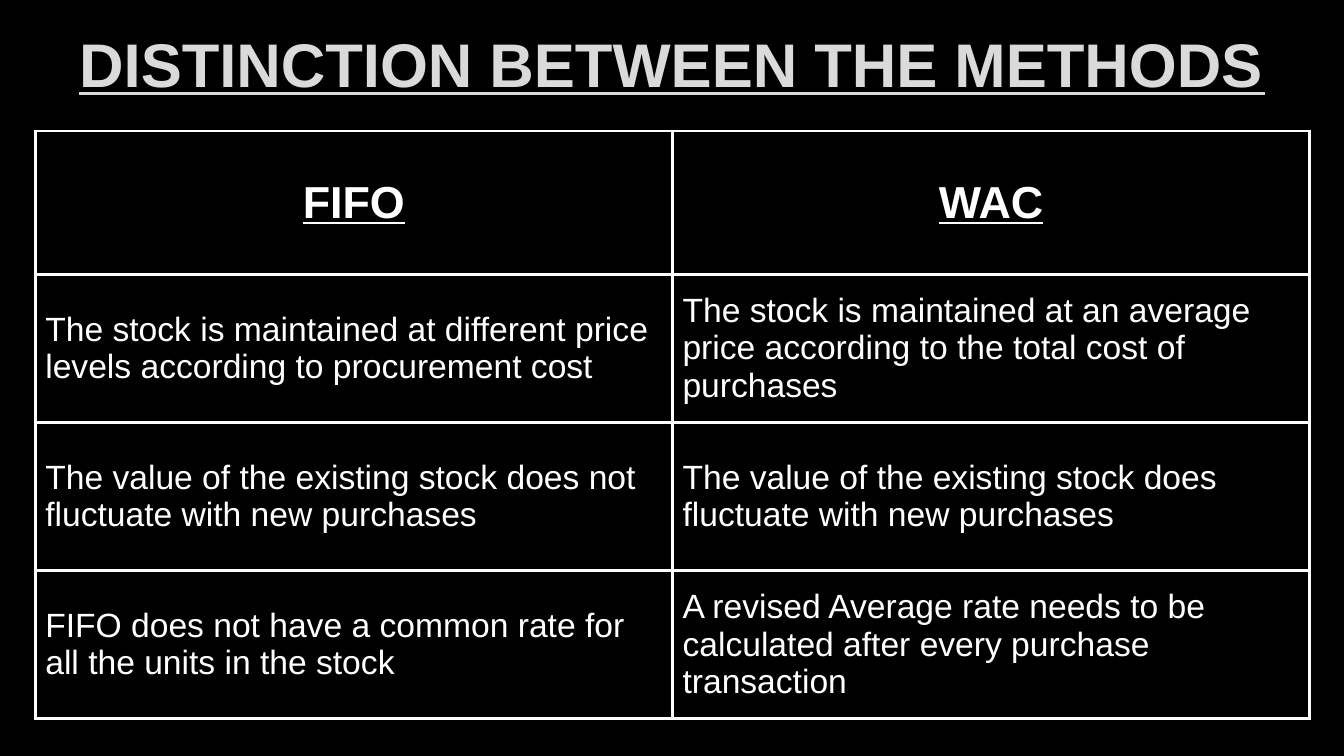
from lxml.etree import SubElement
from pptx import Presentation
from pptx.dml.color import RGBColor
from pptx.enum.text import MSO_ANCHOR, PP_ALIGN
from pptx.oxml.ns import qn
from pptx.util import Inches, Pt

COLORS = {"background": "000000", "title": "DADADA", "outline": "404040", "table": "FFFFFF"}
TITLE_FORMAT = {"name": "Arial", "size": Pt(44), "bold": True, "underline": True}
HEADER_FORMAT = {"name": "Arial", "size": Pt(32), "bold": True, "underline": True}
BODY_FORMAT = {"name": "Arial", "size": Pt(24), "bold": False, "underline": False}

METHOD_ROWS = [
    ("FIFO", "WAC"),
    ("The stock is maintained at different price levels according to procurement cost",
     "The stock is maintained at an average price according to the total cost of purchases"),
    ("The value of the existing stock does not fluctuate with new purchases",
     "The value of the existing stock does fluctuate with new purchases"),
    ("FIFO does not have a common rate for all the units in the stock",
     "A revised Average rate needs to be calculated after every purchase transaction"),
]
HEADER_HEIGHT = 1.42


def write_text(paragraph, text, alignment, color, font_format):
    paragraph.alignment = alignment
    run = paragraph.add_run()
    run.text = text
    for attribute, value in font_format.items():
        setattr(run.font, attribute, value)
    run.font.color.rgb = RGBColor.from_string(COLORS[color])
    return run


def add_solid_line(properties, tag, width, color, opacity=None):
    line = SubElement(properties, qn(tag), w=str(Pt(width)))
    fill = SubElement(line, qn("a:solidFill"))
    shade = SubElement(fill, qn("a:srgbClr"), val=COLORS[color])
    if opacity is not None:
        SubElement(shade, qn("a:alpha"), val=str(opacity * 1000))
    SubElement(line, qn("a:prstDash"), val="solid")
    return line


def add_title(slide, left, top, width, height):
    title = slide.shapes.add_textbox(Inches(left), Inches(top), Inches(width), Inches(height))
    title.text_frame.word_wrap = True
    title.text_frame.vertical_anchor = MSO_ANCHOR.MIDDLE
    run = write_text(title.text_frame.paragraphs[0], "DISTINCTION BETWEEN THE METHODS",
                     PP_ALIGN.CENTER, "title", TITLE_FORMAT)
    properties = run.font._element
    properties.insert(0, add_solid_line(properties, "a:ln", 0.75, "outline", 10))


def style_cell(cell):
    cell.vertical_anchor = MSO_ANCHOR.MIDDLE
    properties = cell._tc.get_or_add_tcPr()
    for side in ("L", "R", "T", "B"):
        add_solid_line(properties, f"a:ln{side}", 2.25, "table")
    cell.fill.background()


def add_methods_table(slide, left, top, width, height):
    column_count = len(METHOD_ROWS[0])
    table = slide.shapes.add_table(len(METHOD_ROWS), column_count, Inches(left), Inches(top),
                                   Inches(width), Inches(height)).table
    table.first_row = False
    table.horz_banding = False
    for column in table.columns:
        column.width = Inches(width / column_count)
    body_height = (height - HEADER_HEIGHT) / (len(METHOD_ROWS) - 1)
    for row_index, texts in enumerate(METHOD_ROWS):
        is_header = row_index == 0
        table.rows[row_index].height = Inches(HEADER_HEIGHT if is_header else body_height)
        for column_index, text in enumerate(texts):
            cell = table.cell(row_index, column_index)
            style_cell(cell)
            write_text(cell.text_frame.paragraphs[0], text,
                       PP_ALIGN.CENTER if is_header else PP_ALIGN.LEFT, "table",
                       HEADER_FORMAT if is_header else BODY_FORMAT)


def main():
    presentation = Presentation()
    presentation.slide_width = Inches(13.33)
    presentation.slide_height = Inches(7.5)
    slide = presentation.slides.add_slide(presentation.slide_layouts[6])
    slide.background.fill.solid()
    slide.background.fill.fore_color.rgb = RGBColor.from_string(COLORS["background"])
    add_title(slide, 0, 0.09, 13.33, 1.06)
    add_methods_table(slide, 0.35, 1.3, 12.64, 5.83)
    presentation.save("out.pptx")


if __name__ == "__main__":
    main()
